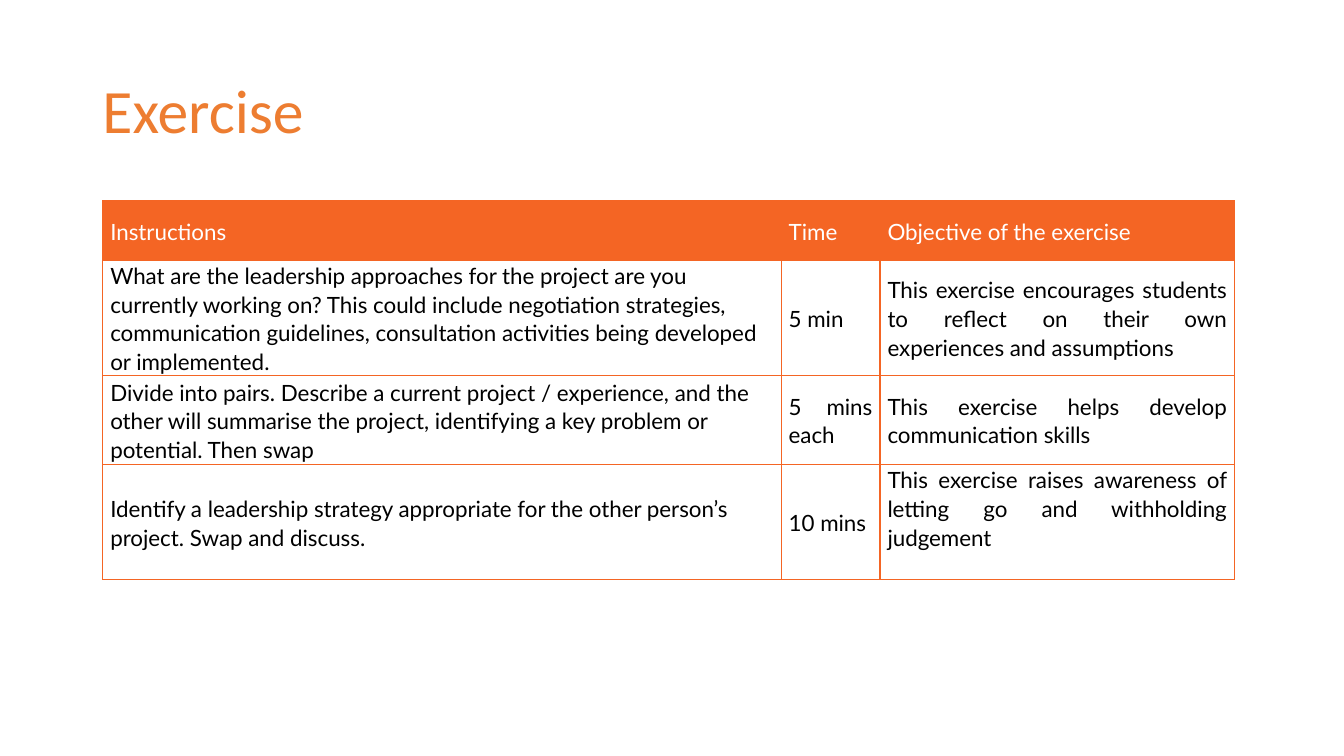
from dataclasses import dataclass

import pptx
import pptx.dml.color
import pptx.enum.text
import pptx.oxml
import pptx.oxml.ns
import pptx.util

Pt = pptx.util.Pt
ALIGN = pptx.enum.text.PP_ALIGN
MIDDLE = pptx.enum.text.MSO_ANCHOR.MIDDLE

COLORS = {"title": "ED7D31", "accent": "F46524", "header": "FFFFFF", "body": "000000"}
COL_WIDTHS = (484.6, 70.6, 253.4)


@dataclass
class ExerciseRow:
    instructions: str
    time: str
    objective: str
    height: float
    objective_bottom: float = 0
    header: bool = False


ROWS = (
    ExerciseRow("Instructions", "Time", "Objective of the exercise", 42.8, header=True),
    ExerciseRow(
        "What are the leadership approaches for the project are you currently working on? "
        "This could include negotiation strategies, communication guidelines, "
        "consultation activities being developed or implemented.",
        "5 min",
        "This exercise encourages students to reflect on their own experiences and assumptions",
        82,
    ),
    ExerciseRow(
        "Divide into pairs. Describe a current project / experience, and the other will "
        "summarise the project, identifying a key problem or potential. Then swap",
        "5 mins each",
        "This exercise helps develop communication skills",
        64,
    ),
    ExerciseRow(
        "Identify a leadership strategy appropriate for the other person’s project. "
        "Swap and discuss.",
        "10 mins",
        "This exercise raises awareness of letting go and withholding judgement",
        82,
        objective_bottom=20.5,
    ),
)


def rgb(name: str) -> pptx.dml.color.RGBColor:
    return pptx.dml.color.RGBColor.from_string(COLORS[name])


def write_text(tf, text: str, *, size: float, font: str, color: str,
               spacing: float, align=ALIGN.LEFT) -> None:
    p = tf.paragraphs[0]
    p.alignment = align
    p.line_spacing = spacing
    r = p.add_run()
    r.text = text
    r.font.size = Pt(size)
    r.font.name = font
    r.font.bold = False
    r.font.color.rgb = rgb(color)


def add_borders(cell, color: str, width: float) -> None:
    """Line all four sides; call before the fill is set, as lines come first in tcPr."""
    tc_pr = cell._tc.get_or_add_tcPr()
    for side in ("lnL", "lnR", "lnT", "lnB"):
        tc_pr.append(pptx.oxml.parse_xml(
            f'<a:{side} {pptx.oxml.ns.nsdecls("a")} w="{Pt(width)}">'
            f'<a:solidFill><a:srgbClr val="{COLORS[color]}"/></a:solidFill></a:{side}>'
        ))


def format_cell(cell, header: bool, bottom: float) -> None:
    cell.vertical_anchor = MIDDLE
    cell.margin_left = cell.margin_right = Pt(5.4)
    cell.margin_top = Pt(0)
    cell.margin_bottom = Pt(bottom)
    add_borders(cell, "accent", 1)
    if header:
        cell.fill.solid()
        cell.fill.fore_color.rgb = rgb("accent")
    else:
        cell.fill.background()


def add_title(s, text: str) -> None:
    sp = s.shapes.title
    sp.left, sp.top, sp.width, sp.height = Pt(66), Pt(28.8), Pt(828), Pt(104.4)
    sp.text_frame.vertical_anchor = MIDDLE
    write_text(sp.text_frame, text, size=44, font="Calibri", color="title", spacing=0.9)


def add_exercise_table(s) -> None:
    table = s.shapes.add_table(
        len(ROWS), len(COL_WIDTHS), Pt(73.4), Pt(143.3),
        Pt(sum(COL_WIDTHS)), Pt(sum(row.height for row in ROWS)),
    ).table
    table.horz_banding = False
    for column, width in zip(table.columns, COL_WIDTHS):
        column.width = Pt(width)
    for i, row in enumerate(ROWS):
        table.rows[i].height = Pt(row.height)
        for j, text in enumerate((row.instructions, row.time, row.objective)):
            cell = table.cell(i, j)
            format_cell(cell, row.header, row.objective_bottom if j == 2 else 0)
            write_text(
                cell.text_frame, text, size=16, font="Lato", spacing=1.07,
                color="header" if row.header else "body",
                align=ALIGN.LEFT if row.header or j == 0 else ALIGN.JUSTIFY,
            )


def main() -> None:
    prs = pptx.Presentation()
    prs.slide_width, prs.slide_height = Pt(960), Pt(540)
    s = prs.slides.add_slide(prs.slide_layouts[5])
    add_title(s, "Exercise")
    add_exercise_table(s)
    prs.save("out.pptx")


if __name__ == "__main__":
    main()
